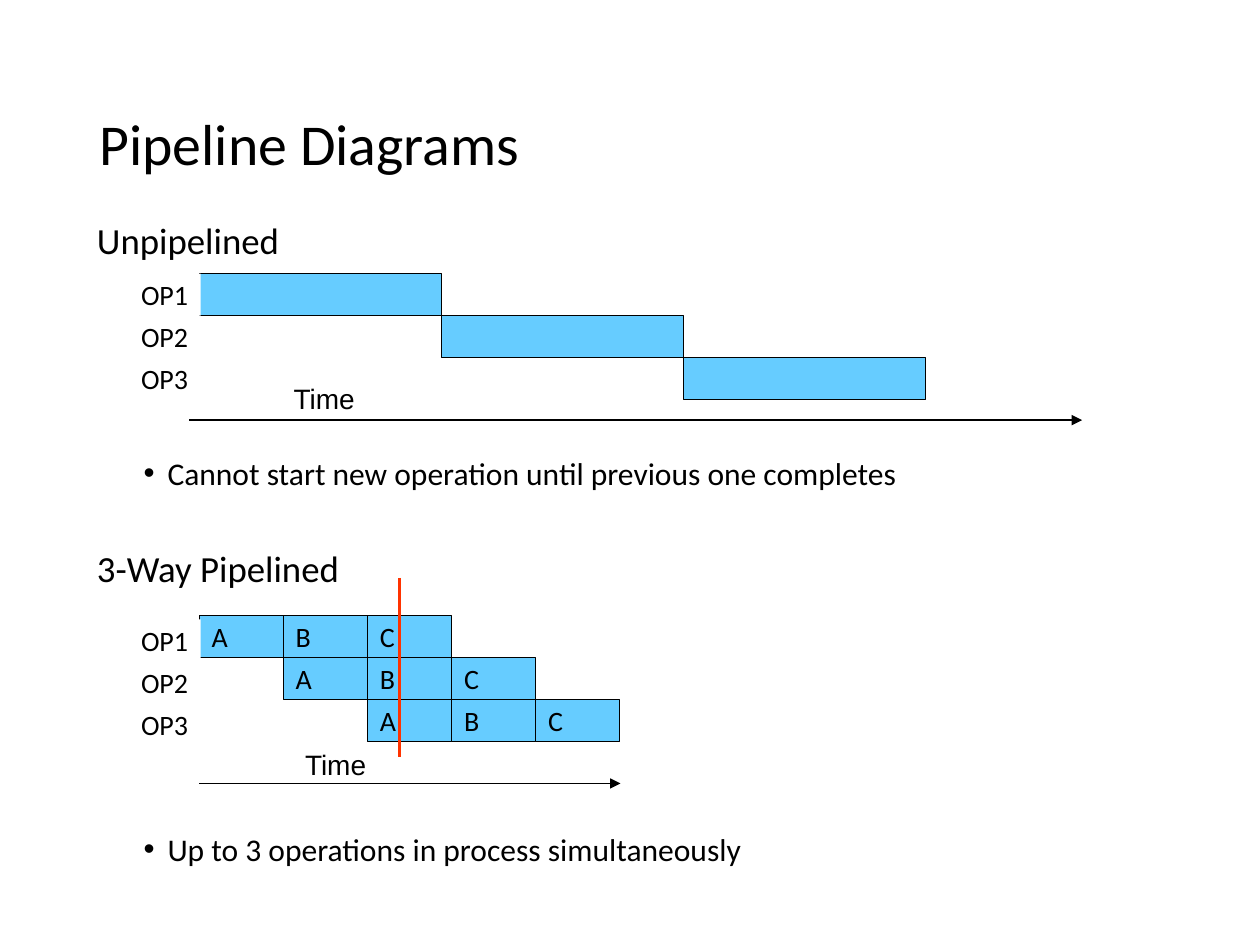
from lxml import etree
from pptx import Presentation
from pptx.dml.color import RGBColor
from pptx.enum import shapes, text
from pptx.oxml import ns
from pptx.util import Inches, Pt

BLACK = RGBColor(0, 0, 0)
WHITE = RGBColor(255, 255, 255)
SKY = RGBColor(0x66, 0xCC, 0xFF)
RED = RGBColor(0xFF, 0x33, 0x00)

OPERATIONS = ["OP1", "OP2", "OP3"]
STAGES = ["A", "B", "C"]
CHART_LEFT = 1.58
ROW_HEIGHT = 0.333
BAR_WIDTH = 1.92
STAGE_WIDTH = 0.667


def write(shape, words, size, font="Calibri", align=text.PP_ALIGN.LEFT):
    frame = shape.text_frame
    frame.word_wrap = True
    frame.vertical_anchor = text.MSO_ANCHOR.MIDDLE
    paragraph = frame.paragraphs[0]
    paragraph.text = words
    paragraph.alignment = align
    paragraph.font.size = Pt(size)
    paragraph.font.name = font
    paragraph.font.color.rgb = BLACK
    return paragraph


def add_text(slide, words, left, top, width, height, size, font="Calibri"):
    box = slide.shapes.add_textbox(
        Inches(left), Inches(top), Inches(width), Inches(height))
    return write(box, words, size, font)


def add_bullet(slide, words, top):
    paragraph = add_text(slide, words, 0.67, top, 8.61, 0.4, 18)
    properties = paragraph._p.get_or_add_pPr()
    properties.set("marL", str(Inches(0.56)))
    properties.set("indent", str(Inches(-0.19)))
    etree.SubElement(properties, ns.qn("a:buFont"), typeface="Arial")
    etree.SubElement(properties, ns.qn("a:buChar"), char="•")


def add_box(slide, left, top, width, fill, outlined=True):
    shape = slide.shapes.add_shape(
        shapes.MSO_SHAPE.RECTANGLE,
        Inches(left), Inches(top), Inches(width), Inches(ROW_HEIGHT))
    shape.shadow.inherit = False
    shape.fill.solid()
    shape.fill.fore_color.rgb = fill
    if outlined:
        shape.line.color.rgb = BLACK
        shape.line.width = Pt(0.75)
    else:
        shape.line.fill.background()
    return shape


def add_labels(slide, top):
    for row, operation in enumerate(OPERATIONS):
        label = add_box(slide, 0.67, top + row * ROW_HEIGHT, 0.92, WHITE, False)
        write(label, operation, 16, align=text.PP_ALIGN.RIGHT)


def add_line(slide, start, end, color, width):
    connector = slide.shapes.add_connector(
        shapes.MSO_CONNECTOR.STRAIGHT,
        Inches(start[0]), Inches(start[1]), Inches(end[0]), Inches(end[1]))
    connector.line.color.rgb = color
    connector.line.width = Pt(width)
    etree.SubElement(connector._element.spPr, ns.qn("a:effectLst"))
    return connector


def add_time_axis(slide, left, right, y, label_left, label_top):
    axis = add_line(slide, (left, y), (right, y), BLACK, 1)
    etree.SubElement(axis.line._get_or_add_ln(), ns.qn("a:tailEnd"),
                     type="triangle")
    add_text(slide, "Time", label_left, label_top, 0.75, 0.36, 16, "Arial")


def add_unpipelined(slide):
    top = 2.17
    add_text(slide, "Unpipelined", 0.67, 1.7, 8.61, 0.4, 21)
    add_time_axis(slide, 1.5, 8.58, 3.33, 2.23, 2.98)
    for row in range(len(OPERATIONS)):
        add_box(slide, CHART_LEFT + row * BAR_WIDTH, top + row * ROW_HEIGHT,
                BAR_WIDTH, SKY)
    add_labels(slide, top)
    add_bullet(slide, "Cannot start new operation until previous one completes",
               3.55)


def add_pipelined(slide):
    top = 4.88
    add_text(slide, "3-Way Pipelined", 0.67, 4.3, 8.61, 0.4, 21)
    add_time_axis(slide, CHART_LEFT, 4.92, 6.21, 2.32, 5.88)
    for row in range(len(OPERATIONS)):
        for column, stage in enumerate(STAGES, row):
            cell = add_box(slide, CHART_LEFT + column * STAGE_WIDTH,
                           top + row * ROW_HEIGHT, STAGE_WIDTH, SKY)
            write(cell, stage, 16)
    add_labels(slide, 4.91)
    add_line(slide, (3.17, 4.58), (3.17, 6), RED, 1.5)
    add_bullet(slide, "Up to 3 operations in process simultaneously", 6.53)


def main():
    presentation = Presentation()
    presentation.slide_width = Inches(9.99)
    presentation.slide_height = Inches(7.49)
    slide = presentation.slides.add_slide(presentation.slide_layouts[6])
    add_text(slide, "Pipeline Diagrams", 0.69, 0.4, 8.61, 1.45, 33)
    add_unpipelined(slide)
    add_pipelined(slide)
    presentation.save("out.pptx")


if __name__ == "__main__":
    main()
